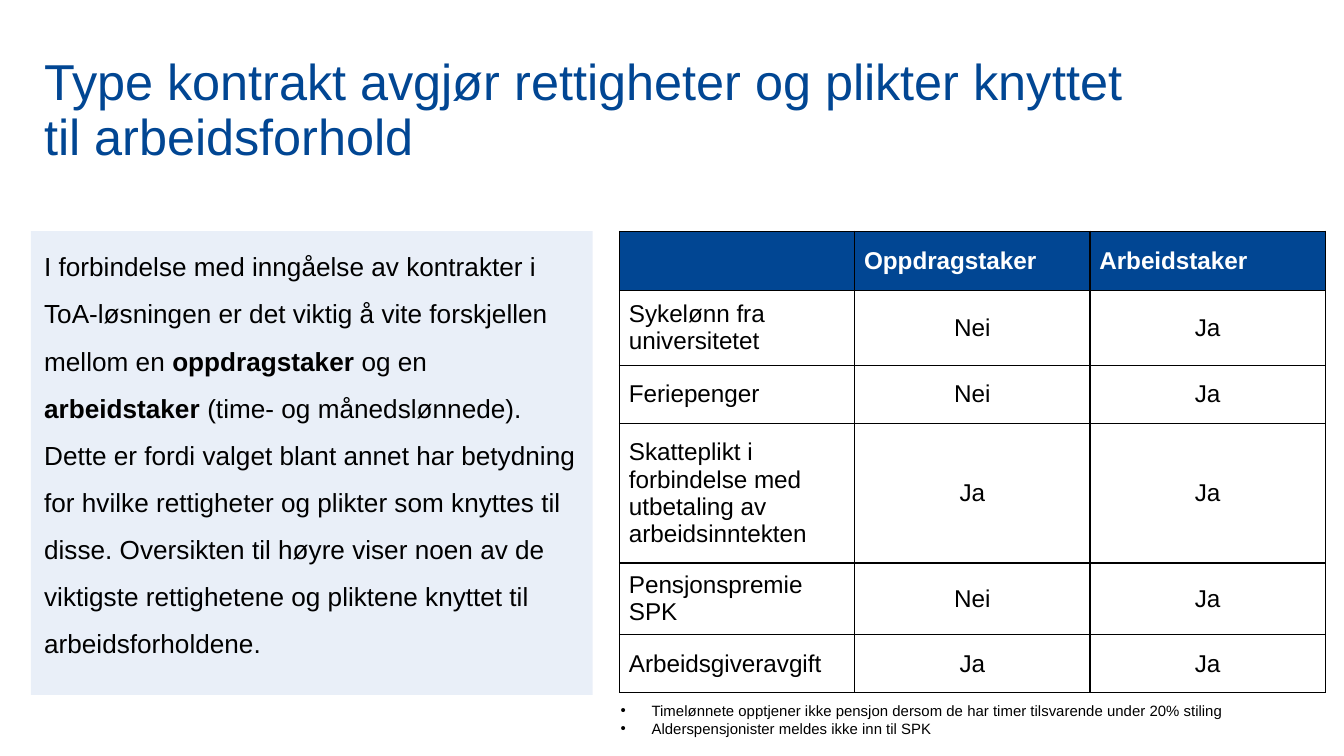
from dataclasses import dataclass

from lxml import etree
from pptx import Presentation
from pptx.dml.color import RGBColor as Color
from pptx.enum.shapes import MSO_SHAPE as Preset
from pptx.enum.text import MSO_ANCHOR as Anchor, PP_ALIGN as Align
from pptx.oxml.ns import qn
from pptx.util import Inches, Pt


@dataclass(frozen=True)
class Theme:
    font: str = "Arial"
    blue: str = "014693"
    tint: str = "B6C8E9"
    tint_opacity: int = 29
    black: str = "000000"
    white: str = "FFFFFF"
    title_size: int = 27
    body_size: int = 14
    table_size: int = 13
    note_size: int = 8
    rule_width: float = 0.75


@dataclass(frozen=True)
class Box:
    left: float
    top: float
    width: float
    height: float

    def emu(self):
        return [Inches(v) for v in (self.left, self.top, self.width, self.height)]


THEME = Theme()
WIDTH = 10
HEIGHT = WIDTH * 9 / 16
MARGIN, BODY_TOP = 0.23, 1.72

TITLE = "Type kontrakt avgjør rettigheter og plikter knyttet til arbeidsforhold"
# Each span is a text and whether it is bold
INTRO = [
    ("I forbindelse med inngåelse av kontrakter i ToA-løsningen er det viktig å vite "
     "forskjellen mellom en ", False),
    ("oppdragstaker ", True),
    ("og en ", False),
    ("arbeidstaker ", True),
    ("(time- og månedslønnede). Dette er fordi valget blant annet har betydning for "
     "hvilke rettigheter og plikter som knyttes til disse. Oversikten til høyre viser "
     "noen av de viktigste rettighetene og pliktene knyttet til arbeidsforholdene.", False),
]
# Each row is a height and its cells
RIGHTS = [
    (0.44, ("", "Oppdragstaker", "Arbeidstaker")),
    (0.56, ("Sykelønn fra universitetet", "Nei", "Ja")),
    (0.43, ("Feriepenger", "Nei", "Ja")),
    (1.04, ("Skatteplikt i forbindelse med utbetaling av arbeidsinntekten", "Ja", "Ja")),
    (0.53, ("Pensjonspremie SPK", "Nei", "Ja")),
    (0.43, ("Arbeidsgiveravgift", "Ja", "Ja")),
]
NOTES = [
    "Timelønnete opptjener ikke pensjon dersom de har timer tilsvarende under 20% stiling",
    "Alderspensjonister meldes ikke inn til SPK",
]


def add_text(para, text, *, size, color=THEME.black, bold=False, align=Align.LEFT, spacing=1.0):
    para.alignment = align
    para.line_spacing = spacing
    span = para.add_run()
    span.text = text
    span.font.name = THEME.font
    span.font.size = Pt(size)
    span.font.bold = bold
    span.font.color.rgb = Color.from_string(color)


def add_bullet(para, indent):
    props = para._p.get_or_add_pPr()
    props.set("marL", str(Inches(indent)))
    props.set("indent", str(-Inches(indent)))
    color = etree.SubElement(props, qn("a:buClr"))
    etree.SubElement(color, qn("a:srgbClr"), val=THEME.black)
    etree.SubElement(props, qn("a:buFont"), typeface=THEME.font)
    etree.SubElement(props, qn("a:buChar"), char="•")


def add_borders(cell):
    props = cell._tc.get_or_add_tcPr()
    for side in ("lnL", "lnR", "lnT", "lnB"):
        line = etree.SubElement(props, qn(f"a:{side}"), w=str(Pt(THEME.rule_width)))
        fill = etree.SubElement(line, qn("a:solidFill"))
        etree.SubElement(fill, qn("a:srgbClr"), val=THEME.black)


def build_title(page, box):
    frame = page.shapes.add_textbox(*box.emu()).text_frame
    frame.word_wrap = True
    frame.vertical_anchor = Anchor.MIDDLE
    add_text(frame.paragraphs[0], TITLE, size=THEME.title_size, color=THEME.blue, spacing=0.9)


def build_intro(page, box):
    panel = page.shapes.add_shape(Preset.RECTANGLE, *box.emu())
    panel.shadow.inherit = False
    panel.line.fill.background()
    panel.fill.solid()
    panel.fill.fore_color.rgb = Color.from_string(THEME.tint)
    tint = panel._element.spPr.find(f".//{qn('a:srgbClr')}")
    etree.SubElement(tint, qn("a:alpha"), val=str(THEME.tint_opacity * 1000))

    frame = panel.text_frame
    frame.word_wrap = True
    frame.vertical_anchor = Anchor.MIDDLE
    frame.margin_bottom = Inches(0.29)  # lifts the text above the middle
    for text, bold in INTRO:
        add_text(frame.paragraphs[0], text, size=THEME.body_size, bold=bold, spacing=1.5)


def build_table(page, box):
    columns = len(RIGHTS[0][1])
    table = page.shapes.add_table(len(RIGHTS), columns, *box.emu()).table
    table.horz_banding = False
    for column in table.columns:
        column.width = Inches(box.width / columns)
    for r, (height, texts) in enumerate(RIGHTS):
        table.rows[r].height = Inches(height)
        header = r == 0
        for c, text in enumerate(texts):
            cell = table.cell(r, c)
            cell.vertical_anchor = Anchor.MIDDLE
            cell.margin_left = cell.margin_right = Inches(0.07)
            cell.margin_top = cell.margin_bottom = Inches(0.05)
            add_borders(cell)
            if header:
                cell.fill.solid()
                cell.fill.fore_color.rgb = Color.from_string(THEME.blue)
            else:
                cell.fill.background()
            if text:
                add_text(cell.text_frame.paragraphs[0], text, size=THEME.table_size,
                         color=THEME.white if header else THEME.black, bold=header,
                         align=Align.LEFT if header or c == 0 else Align.CENTER)


def build_notes(page, box):
    frame = page.shapes.add_textbox(*box.emu()).text_frame
    frame.word_wrap = True
    for i, text in enumerate(NOTES):
        para = frame.add_paragraph() if i else frame.paragraphs[0]
        add_bullet(para, 0.23)
        add_text(para, text, size=THEME.note_size)


def main():
    deck = Presentation()
    deck.slide_width, deck.slide_height = Inches(WIDTH), Inches(HEIGHT)
    page = deck.slides.add_slide(deck.slide_layouts[6])

    # Heading above two columns: introduction left, table and notes right
    table_height = sum(height for height, _ in RIGHTS)
    build_title(page, Box(MARGIN, 0.44, 8.57, 0.78))
    build_intro(page, Box(MARGIN, BODY_TOP, 4.18, 3.45))
    build_table(page, Box(4.61, BODY_TOP, 5.25, table_height))
    build_notes(page, Box(4.52, 5.17, WIDTH / 2, 0.37))
    deck.save("out.pptx")


if __name__ == "__main__":
    main()
